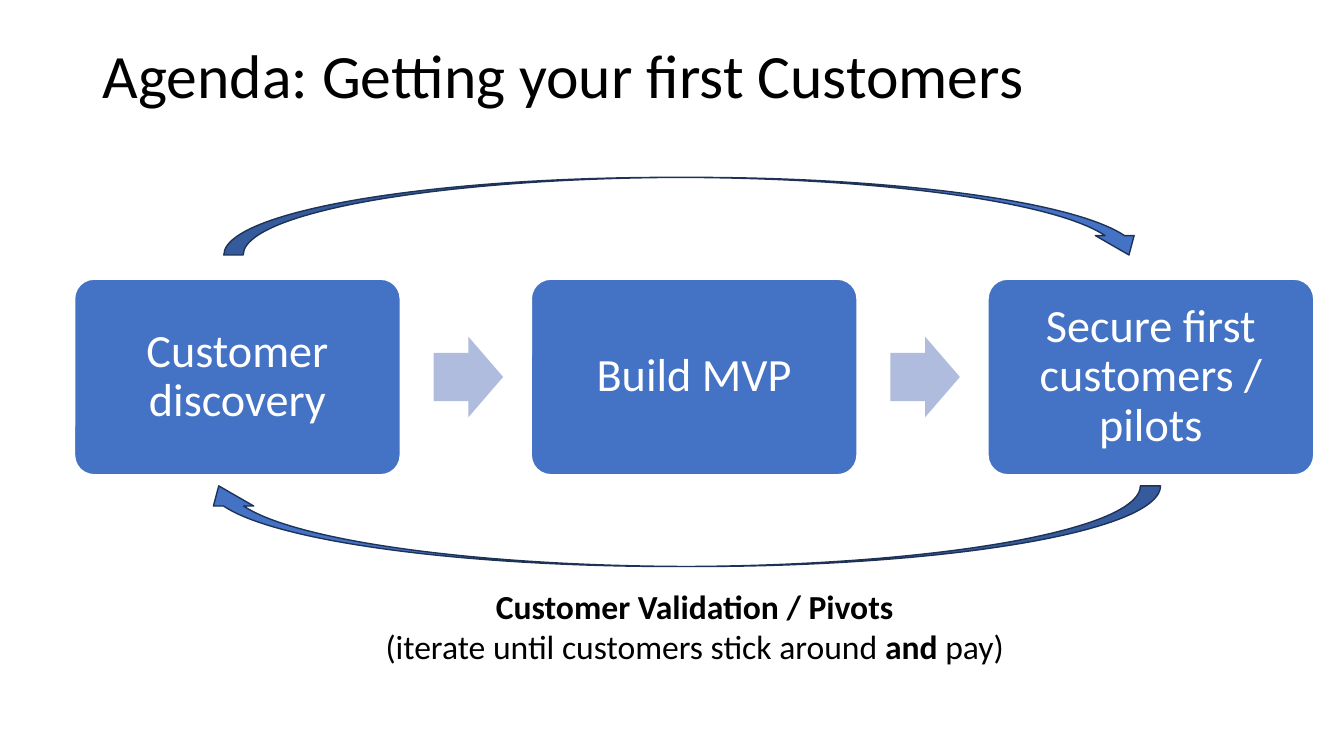
from pptx import Presentation
from pptx.dml.color import RGBColor
from pptx.enum.shapes import MSO_SHAPE
from pptx.enum.text import MSO_ANCHOR, MSO_AUTO_SIZE, PP_ALIGN
from pptx.util import Inches, Pt

FONT = "Calibri"
BLUE, PALE, NAVY = "4472C4", "B0BCDE", "1E3256"
WHITE, BLACK = "FFFFFF", "000000"

STEPS = ["Customer\vdiscovery", "Build MVP", "Secure first customers / pilots"]
STEP_LEFT, STEP_PITCH = 0.74, 4.53


def rgb(value):
    return RGBColor.from_string(value)


def style_paragraph(p, size, color, align, spacing=1.0):
    p.alignment = align
    p.line_spacing = spacing
    p.font.name = FONT
    p.font.size = Pt(size)
    p.font.color.rgb = rgb(color)


def add_shape(s, kind, left, top, width, height, fill, line=None):
    sp = s.shapes.add_shape(kind, Inches(left), Inches(top), Inches(width), Inches(height))
    sp.shadow.inherit = False
    sp.fill.solid()
    sp.fill.fore_color.rgb = rgb(fill)
    if line:
        sp.line.color.rgb = rgb(line)
        sp.line.width = Pt(1)
    else:
        sp.line.fill.background()
    return sp


def add_title(s, text):
    sp = s.shapes.title
    sp.left, sp.top, sp.width, sp.height = map(Inches, (0.92, 0.31, 11.5, 0.94))
    tf = sp.text_frame
    tf.text = text
    tf.word_wrap = True
    tf.auto_size = MSO_AUTO_SIZE.NONE
    tf.vertical_anchor = MSO_ANCHOR.MIDDLE
    style_paragraph(tf.paragraphs[0], 44, BLACK, PP_ALIGN.LEFT, 0.9)


def add_step(s, left, text):
    sp = add_shape(s, MSO_SHAPE.ROUNDED_RECTANGLE, left, 2.77, 3.23, 1.94, BLUE, WHITE)
    sp.adjustments[0] = 0.1
    tf = sp.text_frame
    tf.word_wrap = True
    tf.vertical_anchor = MSO_ANCHOR.MIDDLE
    tf.margin_left = tf.margin_right = Inches(0.2)
    tf.margin_top = tf.margin_bottom = Inches(0.2)
    tf.text = text
    style_paragraph(tf.paragraphs[0], 33, WHITE, PP_ALIGN.CENTER, 0.9)


def add_step_arrow(s, left):
    sp = add_shape(s, MSO_SHAPE.RIGHT_ARROW, left, 3.34, 0.69, 0.8, PALE)
    sp.adjustments[0] = 0.6
    sp.adjustments[1] = 0.5


def add_loop_arrow(s, left, top, width, height, rotation=0):
    sp = add_shape(s, MSO_SHAPE.CURVED_DOWN_ARROW, left, top, width, height, BLUE, NAVY)
    sp.rotation = rotation


def add_caption(s, lines):
    """Each line is a list of (text, bold) runs."""
    tf = s.shapes.add_textbox(Inches(3.49), Inches(5.76), Inches(6.8), Inches(0.91)).text_frame
    tf.word_wrap = True
    for i, runs in enumerate(lines):
        p = tf.add_paragraph() if i else tf.paragraphs[0]
        style_paragraph(p, 24, BLACK, PP_ALIGN.CENTER)
        for text, bold in runs:
            r = p.add_run()
            r.text = text
            r.font.bold = bold


def main():
    prs = Presentation()
    prs.slide_width, prs.slide_height = Inches(13.33), Inches(7.5)
    s = prs.slides.add_slide(prs.slide_layouts[5])
    add_title(s, "Agenda: Getting your first Customers")

    # Process steps with an arrow between neighbours
    for i, text in enumerate(STEPS):
        left = STEP_LEFT + i * STEP_PITCH
        add_step(s, left, text)
        if i < len(STEPS) - 1:
            add_step_arrow(s, left + 3.56)

    # Feedback loop above and below the steps
    add_loop_arrow(s, 2.22, 1.76, 9.17, 0.77)
    add_loop_arrow(s, 1.97, 4.82, 9.54, 0.8, rotation=180)

    # Loop caption
    add_caption(s, [
        [("Customer Validation / Pivots", True)],
        [("(iterate until customers stick around ", False), ("and", True), (" pay)", False)],
    ])
    prs.save("out.pptx")


if __name__ == "__main__":
    main()
